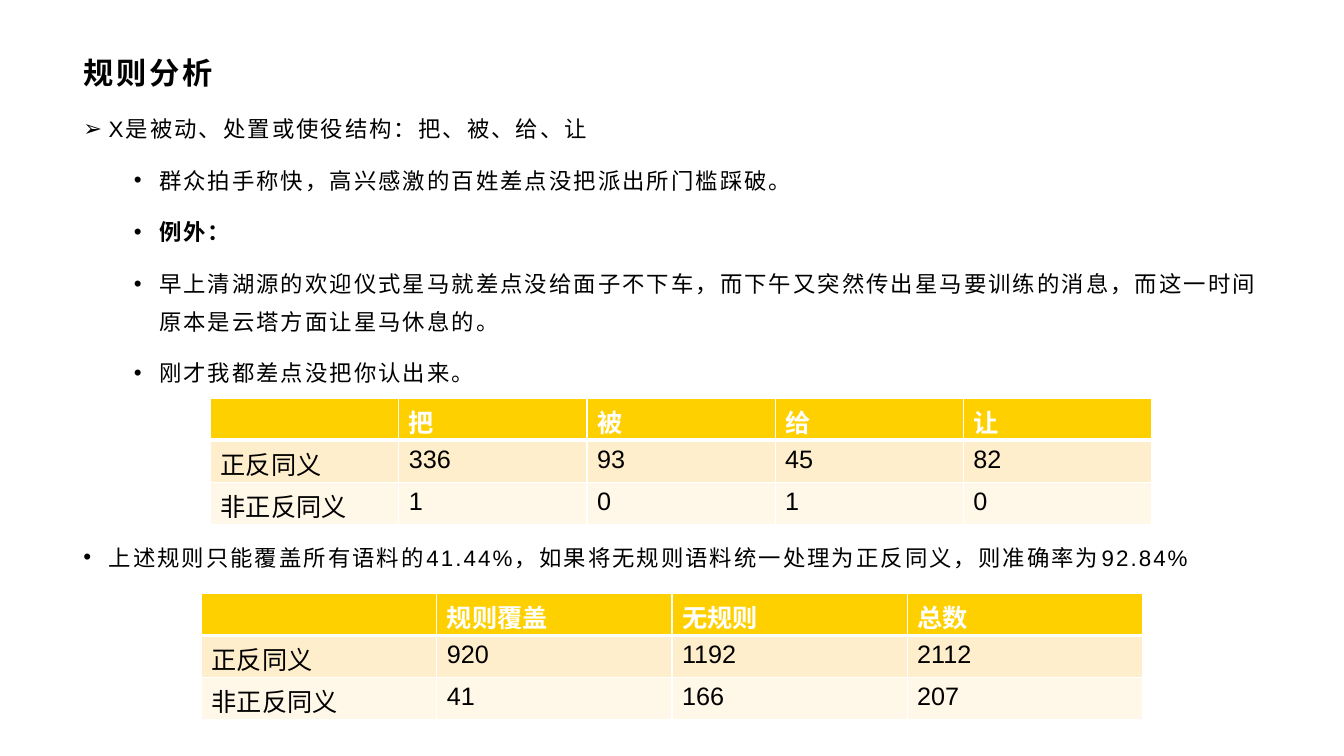
from lxml.etree import SubElement
from pptx import Presentation
from pptx.dml.color import RGBColor
from pptx.enum.text import MSO_ANCHOR
from pptx.oxml.ns import qn
from pptx.util import Pt

BLACK = RGBColor(0x00, 0x00, 0x00)
WHITE = RGBColor(0xFF, 0xFF, 0xFF)
GOLD = RGBColor(0xFE, 0xD0, 0x00)
CREAM = RGBColor(0xFF, 0xEE, 0xCC)
IVORY = RGBColor(0xFF, 0xF7, 0xE7)

LEFT, WIDTH = 52.5, 855
TABLE_WIDTH, ROW_HEIGHT = 672, 30

RULE = [("X是被动、处置或使役结构：把、被、给、让", "➢", 0, False)]
EXAMPLES = [
    ("群众拍手称快，高兴感激的百姓差点没把派出所门槛踩破。", "•", 1, False),
    ("例外：", "•", 1, True),
    ("早上清湖源的欢迎仪式星马就差点没给面子不下车，而下午又突然传出星马要训练的消息，"
     "而这一时间原本是云塔方面让星马休息的。", "•", 1, False),
    ("刚才我都差点没把你认出来。", "•", 1, False),
]
CONCLUSION = [
    ("上述规则只能覆盖所有语料的41.44%，如果将无规则语料统一处理为正反同义，"
     "则准确率为92.84%", "•", 0, False),
]
MARKER_COUNTS = [
    ["", "把", "被", "给", "让"],
    ["正反同义", "336", "93", "45", "82"],
    ["非正反同义", "1", "0", "1", "0"],
]
COVERAGE_COUNTS = [
    ["", "规则覆盖", "无规则", "总数"],
    ["正反同义", "920", "1192", "2112"],
    ["非正反同义", "41", "166", "207"],
]


def set_font(paragraph, size, color=BLACK, bold=False):
    """Set the common font of a paragraph."""
    font = paragraph.font
    font.name, font.size, font.bold = "Arial", Pt(size), bold
    font.color.rgb = color


def add_spaced_run(paragraph, text, spacing):
    """Add a run with letter spacing in points."""
    run = paragraph.add_run()
    run.text = text
    run._r.get_or_add_rPr().set("spc", str(int(spacing * 100)))


def add_frame(slide, top, height):
    """Add a wrapping text box across the content width."""
    frame = slide.shapes.add_textbox(Pt(LEFT), Pt(top), Pt(WIDTH), Pt(height)).text_frame
    frame.word_wrap = True
    return frame


def add_title(slide, text):
    """Add the slide heading."""
    frame = add_frame(slide, 34.5, 34.5)
    frame.vertical_anchor = MSO_ANCHOR.MIDDLE
    heading = frame.paragraphs[0]
    add_spaced_run(heading, text, 2)
    set_font(heading, 21.6, bold=True)


def add_bullets(slide, top, height, items):
    """Add a bulleted list of text, bullet, level and weight."""
    frame = add_frame(slide, top, height)
    for index, (text, bullet, level, bold) in enumerate(items):
        item = frame.paragraphs[0] if index == 0 else frame.add_paragraph()
        item.level = level
        item.line_spacing = 1.4 if level else 1.2
        item.space_after = Pt(10)
        properties = item._p.get_or_add_pPr()
        properties.set("marL", str(Pt(18 + 36 * level)))
        properties.set("indent", str(Pt(-18)))
        SubElement(properties, qn("a:buFont"), typeface="Arial")
        SubElement(properties, qn("a:buChar"), char=bullet)
        add_spaced_run(item, text, 1.5)
        set_font(item, 16, bold=bold)


def add_borders(cell, top, bottom):
    """Draw white borders around a cell."""
    properties = cell._tc.get_or_add_tcPr()
    for side, weight in (("L", 1), ("R", 1), ("T", top), ("B", bottom)):
        line = SubElement(properties, qn(f"a:ln{side}"), w=str(Pt(weight)))
        fill = SubElement(line, qn("a:solidFill"))
        SubElement(fill, qn("a:srgbClr"), val=str(WHITE))


def add_counts(slide, left, top, rows):
    """Add a table of counts with a gold header row."""
    columns = len(rows[0])
    table = slide.shapes.add_table(len(rows), columns, Pt(left), Pt(top),
                                   Pt(TABLE_WIDTH), Pt(ROW_HEIGHT * len(rows))).table
    for column in table.columns:
        column.width = Pt(TABLE_WIDTH / columns)
    for r, (values, color) in enumerate(zip(rows, (GOLD, CREAM, IVORY))):
        header = r == 0
        for c, value in enumerate(values):
            cell = table.cell(r, c)
            add_borders(cell, 3 if r == 1 else 1, 3 if header else 1)
            cell.fill.solid()
            cell.fill.fore_color.rgb = color
            cell.text = value
            set_font(cell.text_frame.paragraphs[0], 18, WHITE if header else BLACK, header)


def main():
    """Build and save the rule analysis slide."""
    deck = Presentation()
    deck.slide_width, deck.slide_height = Pt(960), Pt(540)
    slide = deck.slides.add_slide(deck.slide_layouts[6])
    add_title(slide, "规则分析")
    add_bullets(slide, 75, 207, RULE + EXAMPLES)
    add_bullets(slide, 381, 36, CONCLUSION)
    add_counts(slide, 150.5, 284.5, MARKER_COUNTS)
    add_counts(slide, 144, 424, COVERAGE_COUNTS)
    deck.save("out.pptx")


if __name__ == "__main__":
    main()
